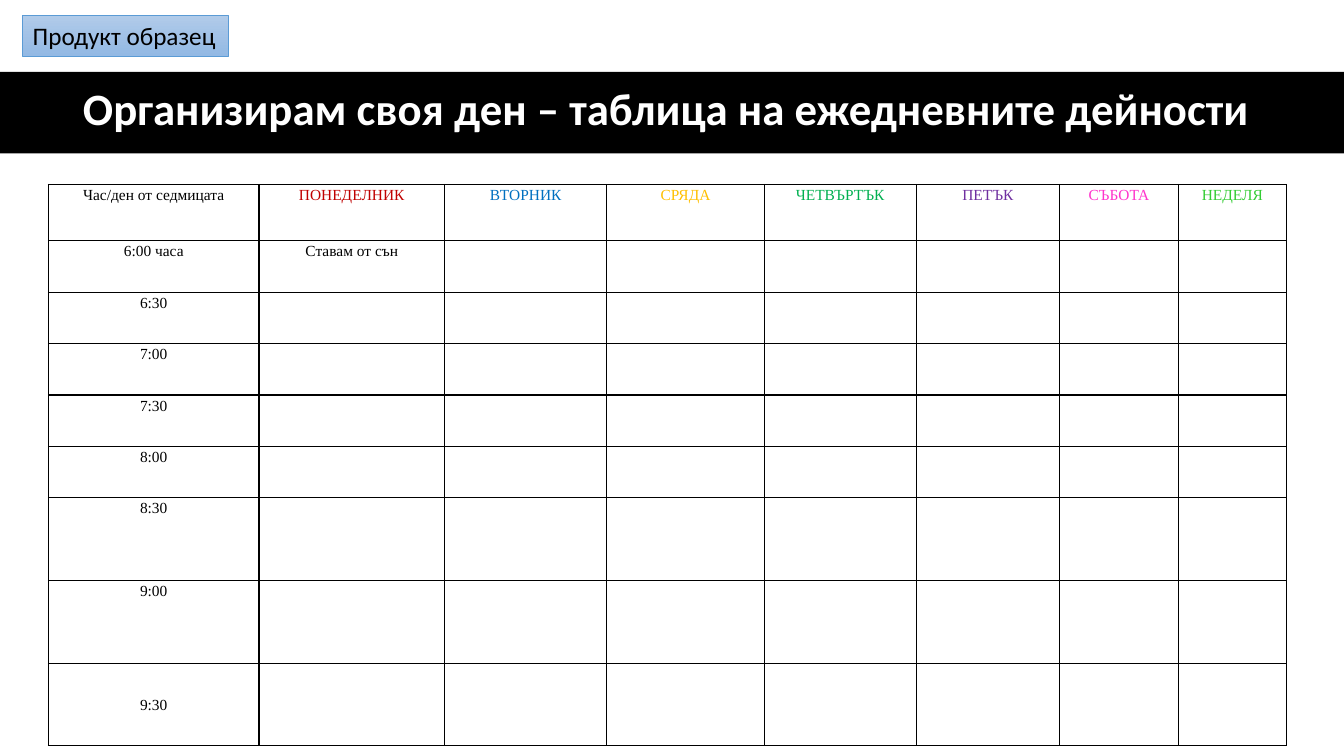
from pptx import Presentation
from pptx.dml.color import RGBColor
from pptx.enum.shapes import MSO_SHAPE
from pptx.enum.text import MSO_ANCHOR, MSO_AUTO_SIZE, PP_ALIGN
from pptx.oxml import parse_xml
from pptx.oxml.ns import nsdecls
from pptx.util import Inches, Pt

WIDE, HIGH = Inches(13.33), Inches(7.5)
HUES = {
    "black": "000000", "white": "FFFFFF", "red": "C00000", "blue": "0070C0",
    "gold": "FFC000", "green": "00B050", "violet": "7030A0", "pink": "FF33CC",
    "lime": "33CC33", "sky": "B1CBE9", "haze": "93B9E4", "edge": "5B9BD5",
}
HEADS = [
    ("Час/ден от седмицата", "black"), ("ПОНЕДЕЛНИК", "red"),
    ("ВТОРНИК", "blue"), ("СРЯДА", "gold"), ("ЧЕТВЪРТЪК", "green"),
    ("ПЕТЪК", "violet"), ("СЪБОТА", "pink"), ("НЕДЕЛЯ", "lime"),
]
HOURS = ["6:00 часа", "6:30", "7:00", "7:30", "8:00", "8:30", "9:00", "9:30"]
COLS = [2.09, 1.84, 1.61, 1.56, 1.51, 1.42, 1.18, 1.07]
ROWS = [0.56] + [0.51] * 5 + [0.82] * 3
TITLE = {"align": PP_ALIGN.CENTER, "line_spacing": 0.9, "space_after": Pt(6)}
ENTRY = {"align": PP_ALIGN.CENTER, "line_spacing": 1.07, "space_after": Pt(8)}
TAG = {"align": PP_ALIGN.LEFT}
PAD = {"margin_left": Inches(0.04), "margin_right": Inches(0.04),
       "margin_top": Inches(0.01), "margin_bottom": 0}


def tint(name):
    """Return the named colour."""
    return RGBColor.from_string(HUES[name])


def apply(item, form):
    """Set every attribute in a dict of format values."""
    for key, value in form.items():
        setattr(item, key, value)


def write(frame, text, form, hue, **font):
    """Write one formatted paragraph into a text frame."""
    line = frame.paragraphs[0]
    line.text = text
    apply(line, {key: val for key, val in form.items() if key != "align"})
    line.alignment = form["align"]
    apply(line.runs[0].font, font)
    line.runs[0].font.color.rgb = tint(hue)


def block(slide, left, top, wide, high):
    """Add a flat rectangle placed in shares of the slide."""
    box = slide.shapes.add_shape(
        MSO_SHAPE.RECTANGLE, int(WIDE * left), int(HIGH * top),
        int(WIDE * wide), int(HIGH * high))
    box.shadow.inherit = False
    return box


def banner(slide, text):
    """Build the black band with the slide title on it."""
    band = block(slide, 0, 0.095, 1, 0.108)
    band.fill.solid()
    band.fill.fore_color.rgb = tint("black")
    band.line.fill.background()
    slide.shapes._spTree.insert(2, band._element)
    title = slide.shapes.title
    apply(title, {"left": Inches(0.48), "top": Inches(0.7),
                  "width": Inches(12.26), "height": Inches(0.81)})
    apply(title.text_frame, {"vertical_anchor": MSO_ANCHOR.MIDDLE,
                             "word_wrap": True,
                             "auto_size": MSO_AUTO_SIZE.NONE})
    write(title.text_frame, text, TITLE, "white",
          size=Pt(32), bold=True, name="Calibri")


def label(slide, text):
    """Build the shaded tag in the top corner."""
    tag = block(slide, 0.017, 0.02, 0.153, 0.054)
    tag.fill.gradient()
    tag.fill.gradient_angle = 270
    for stop, hue in zip(tag.fill.gradient_stops, ("sky", "haze")):
        stop.color.rgb = tint(hue)
    tag.line.color.rgb = tint("edge")
    tag.line.width = Pt(0.5)
    apply(tag.text_frame, {"word_wrap": False,
                           "vertical_anchor": MSO_ANCHOR.TOP,
                           "auto_size": MSO_AUTO_SIZE.SHAPE_TO_FIT_TEXT})
    write(tag.text_frame, text, TAG, "black", size=Pt(18), name="Calibri")


def frame(cell):
    """Clear the fill of a cell and rule its four sides."""
    apply(cell, PAD)
    props = cell._tc.get_or_add_tcPr()
    for side in ("lnL", "lnR", "lnT", "lnB"):
        props.append(parse_xml(
            f'<a:{side} {nsdecls("a")} w="12700"><a:solidFill>'
            f'<a:srgbClr val="{HUES["black"]}"/></a:solidFill></a:{side}>'))
    cell.fill.background()


def enter(cell, text, hue="black"):
    """Write one entry of the timetable."""
    write(cell.text_frame, text, ENTRY, hue,
          size=Pt(11), name="Times New Roman")


def plan(slide):
    """Build the weekly timetable."""
    grid = slide.shapes.add_table(
        len(ROWS), len(COLS), Inches(0.48), Inches(1.83),
        Inches(sum(COLS)), Inches(sum(ROWS))).table
    apply(grid, {"first_row": False, "horz_banding": False})
    for col, size in zip(grid.columns, COLS):
        col.width = Inches(size)
    for row, size in zip(grid.rows, ROWS):
        row.height = Inches(size)
    for cell in grid.iter_cells():
        frame(cell)
    for col, (text, hue) in enumerate(HEADS):
        enter(grid.cell(0, col), text, hue)
    for row, text in enumerate(HOURS, 1):
        enter(grid.cell(row, 0), text)
    enter(grid.cell(1, 1), "Ставам от сън")
    grid.cell(len(HOURS), 0).vertical_anchor = MSO_ANCHOR.MIDDLE


def main():
    """Build and save the slide."""
    deck = Presentation()
    apply(deck, {"slide_width": WIDE, "slide_height": HIGH})
    slide = deck.slides.add_slide(deck.slide_layouts[5])
    banner(slide, "Организирам своя ден – таблица на ежедневните дейности")
    plan(slide)
    label(slide, "Продукт образец")
    deck.save("out.pptx")


if __name__ == "__main__":
    main()
